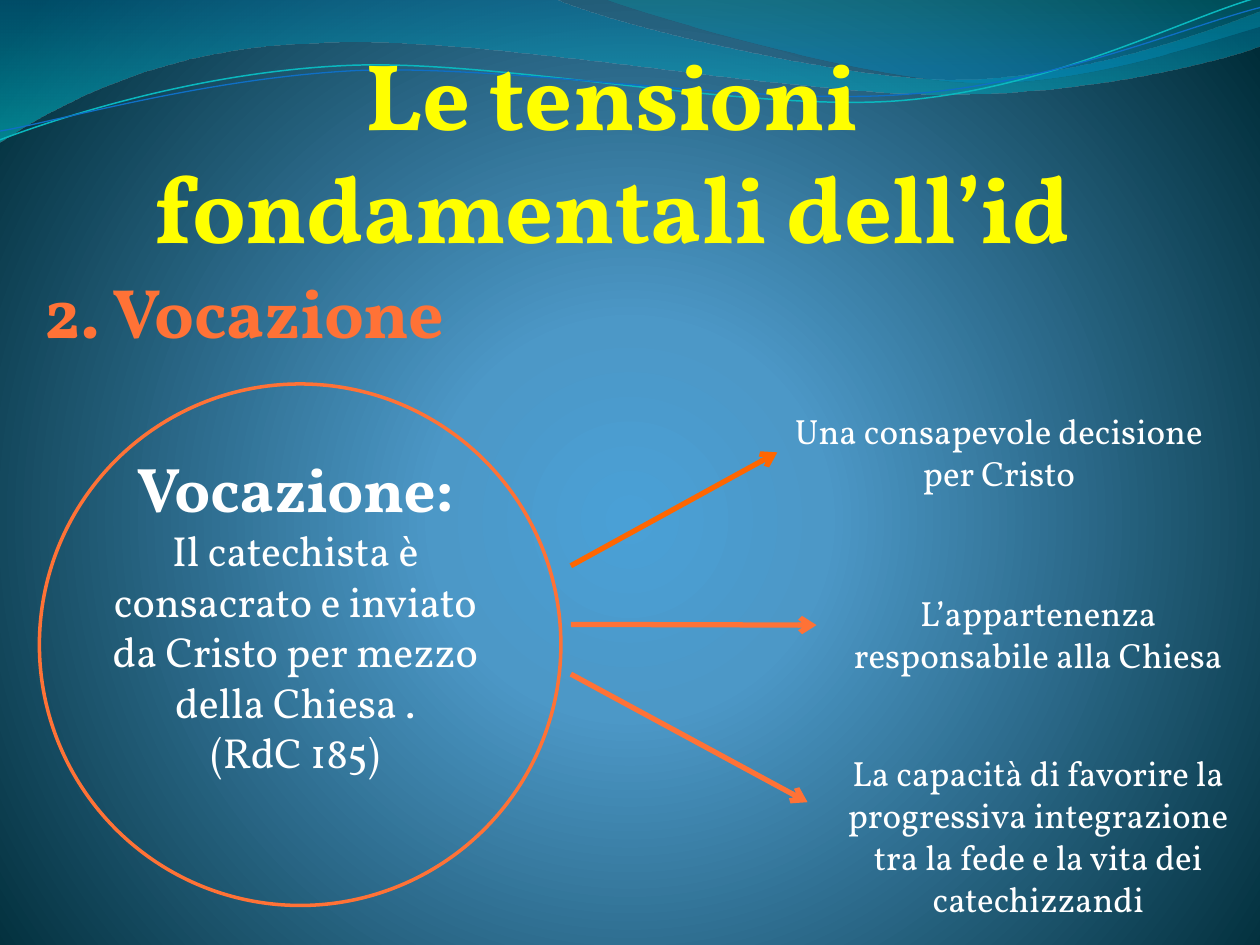
import dataclasses

import pptx
import pptx.dml.color
import pptx.enum.shapes
import pptx.enum.text
import pptx.oxml
import pptx.oxml.ns
import pptx.util
from lxml import etree

Pt = pptx.util.Pt
qn = pptx.oxml.ns.qn
CENTER = pptx.enum.text.PP_ALIGN.CENTER
LEFT = pptx.enum.text.PP_ALIGN.LEFT


@dataclasses.dataclass(frozen=True)
class Theme:
    font: str = "Vollkorn"
    title: str = "FFFF00"
    text: str = "FFFFFF"
    accent: str = "FF7236"
    first_arrow: str = "FF6600"
    upper_thread: str = "0AB8BF"
    lower_thread: str = "0F6FC6"
    # Gradient stops: position %, colour, opacity %
    background: tuple = ((0, "4AA0D6", 100), (25, "4C98C7", 100), (100, "002C38", 100))
    wide_wave: tuple = ((0, "0074A1", 45), (100, "00C6CF", 55))
    right_wave: tuple = ((0, "00A1A9", 30), (80, "008BBF", 45))
    title_size: int = 54
    section_size: int = 40
    heading_size: int = 36
    body_size: int = 24
    note_size: int = 20


THEME = Theme()

# Each wave is a start point followed by line ends (1 point) or curves (3 points).
WIDE_WAVE = [
    (0, 0), [(316.8, -0.7)],
    [(342.7, 12.2), (478.1, 45.4), (545.8, 45.4)],
    [(614.2, 45.4), (689.8, 18.7), (720, 6.5)],
    [(720.7, 25.9)],
    [(707.8, 31.7), (626.4, 54.7), (537.1, 54)],
    [(447.8, 54), (275, 20.2), (185, 24.5)],
    [(92.9, 25.9), (33.1, 59.8), (-0.7, 81.4)],
]
RIGHT_WAVE = [
    (344.9, -0.7),
    [(366.5, 7.9), (491, 44.6), (553.7, 46.8)],
    [(616.3, 49.7), (691.9, 23), (720, 15.1)],
    [(720, 0)],
]
UPPER_THREAD = [
    (0, 79.9),
    [(34.6, 67), (113.8, 41), (199.4, 37.4)],
    [(284.4, 33.8), (427, 64.1), (513.4, 57.6)],
    [(599.8, 51.1), (675.4, 10.8), (718.6, -1.4)],
]
LOWER_THREAD = [
    (0, 74.9),
    [(33.8, 69.1), (118.1, 44.6), (203.8, 40.3)],
    [(290.2, 36.7), (429.8, 60.5), (516.2, 54)],
    [(601.9, 48.2), (677.5, 15.1), (720, 4.3)],
]


def rgb(color):
    return pptx.dml.color.RGBColor.from_string(color)


def set_line(line, color, width):
    line.color.rgb = rgb(color)
    line.width = Pt(width)


def set_gradient(fill, owner, stops, circle=None):
    """Fill owner downwards, or outwards from the circle rectangle if given."""
    fill.gradient()
    grad = next(owner.iter(qn("a:gradFill")))
    for child in list(grad):
        grad.remove(child)
    gs_list = etree.SubElement(grad, qn("a:gsLst"))
    for position, color, opacity in stops:
        gs = etree.SubElement(gs_list, qn("a:gs"), pos=str(position * 1000))
        clr = etree.SubElement(gs, qn("a:srgbClr"), val=color)
        if opacity < 100:
            etree.SubElement(clr, qn("a:alpha"), val=str(opacity * 1000))
    if circle:
        shade = etree.SubElement(grad, qn("a:path"), path="circle")
        sides = {side: str(value * 1000) for side, value in circle.items()}
        etree.SubElement(shade, qn("a:fillToRect"), **sides)
    else:
        etree.SubElement(grad, qn("a:lin"), ang="5400000", scaled="0")


def bend(sp, segments):
    """Replace the straight segments that have control points by cubic curves."""
    outline = next(sp.element.iter(qn("a:path")))
    for straight, segment in zip(outline.findall(qn("a:lnTo")), segments):
        if len(segment) == 3:
            curve = etree.Element(qn("a:cubicBezTo"))
            for x, y in segment:
                etree.SubElement(curve, qn("a:pt"), x=str(Pt(x) - sp.left),
                                 y=str(Pt(y) - sp.top))
            outline.replace(straight, curve)


def add_wave(slide, wave, stops=None, line=None):
    start, *segments = wave
    builder = slide.shapes.build_freeform(*map(Pt, start))
    ends = [tuple(map(Pt, segment[-1])) for segment in segments]
    builder.add_line_segments(ends, close=stops is not None)
    sp = builder.convert_to_shape()
    bend(sp, segments)
    sp.shadow.inherit = False
    if stops:
        set_gradient(sp.fill, sp.element, stops)
    else:
        sp.fill.background()
    if line:
        set_line(sp.line, *line)
    else:
        sp.line.fill.background()


def add_circle(slide, left, top, size):
    oval = pptx.enum.shapes.MSO_SHAPE.OVAL
    sp = slide.shapes.add_shape(oval, Pt(left), Pt(top), Pt(size), Pt(size))
    sp.shadow.inherit = False
    sp.fill.background()
    set_line(sp.line, THEME.accent, 2)


def add_text(slide, box, paragraphs, align=CENTER):
    """Add a text box from (text, size, colour, bold) paragraphs."""
    tf = slide.shapes.add_textbox(*map(Pt, box)).text_frame
    tf.word_wrap = True
    tf.auto_size = pptx.enum.text.MSO_AUTO_SIZE.SHAPE_TO_FIT_TEXT
    for i, (text, size, color, bold) in enumerate(paragraphs):
        p = tf.add_paragraph() if i else tf.paragraphs[0]
        p.alignment = align
        r = p.add_run()
        r.text = text
        for name, value in {"name": THEME.font, "size": Pt(size), "bold": bold}.items():
            setattr(r.font, name, value)
        r.font.color.rgb = rgb(color)


def add_arrow(slide, start, end, color):
    straight = pptx.enum.shapes.MSO_CONNECTOR.STRAIGHT
    cxn = slide.shapes.add_connector(straight, *map(Pt, (*start, *end)))
    set_line(cxn.line, color, 3)
    etree.SubElement(cxn.element.spPr.find(qn("a:ln")), qn("a:tailEnd"), type="arrow")
    etree.SubElement(cxn.element.spPr, qn("a:effectLst"))


def main():
    prs = pptx.Presentation()
    prs.slide_width, prs.slide_height = Pt(720), Pt(540)
    slide = prs.slides.add_slide(prs.slide_layouts[6])
    set_gradient(slide.background.fill, slide.element, THEME.background,
                 circle={"l": 10, "t": 110, "r": 10, "b": 100})
    add_wave(slide, WIDE_WAVE, stops=THEME.wide_wave)
    add_wave(slide, RIGHT_WAVE, stops=THEME.right_wave)
    add_wave(slide, UPPER_THREAD, line=(THEME.upper_thread, 0.85))
    add_wave(slide, LOWER_THREAD, line=(THEME.lower_thread, 0.75))

    add_circle(slide, 22.5, 219.4, 298)
    add_text(slide, (50.6, 253.2, 236.2, 196.6), [
        ("Vocazione:", THEME.heading_size, THEME.text, True),
        ("Il catechista è consacrato e inviato da Cristo per mezzo della Chiesa .",
         THEME.body_size, THEME.text, False),
        ("(RdC 185)", THEME.body_size, THEME.text, False),
    ])

    # Arrow start y, arrow end, arrow colour, note position and height, note
    tensions = [
        (323.3, (444.2, 258.5), THEME.first_arrow, (444.2, 230.4), 55.4,
         "Una consapevole decisione per Cristo"),
        (356.8, (466.6, 357.2), THEME.accent, (466.6, 334.5), 55.4,
         "L’appartenenza responsabile alla Chiesa"),
        (385.2, (461.5, 458.4), THEME.accent, (466.6, 425.9), 104.4,
         "La capacità di favorire la progressiva integrazione "
         "tra la fede e la vita dei catechizzandi"),
    ]
    for start_y, end, color, corner, height, note in tensions:
        add_arrow(slide, (326.2, start_y), end, color)
        add_text(slide, (*corner, 253.4, height),
                 [(note, THEME.note_size, THEME.text, False)])

    add_text(slide, (18.3, 149.8, 456.5, 55.4),
             [("2. Vocazione", THEME.section_size, THEME.accent, True)], LEFT)
    add_text(slide, (56.2, 16.8, 587.5, 138.2),
             [("Le tensioni fondamentali dell’id", THEME.title_size, THEME.title, True)])
    prs.save("out.pptx")


if __name__ == "__main__":
    main()
